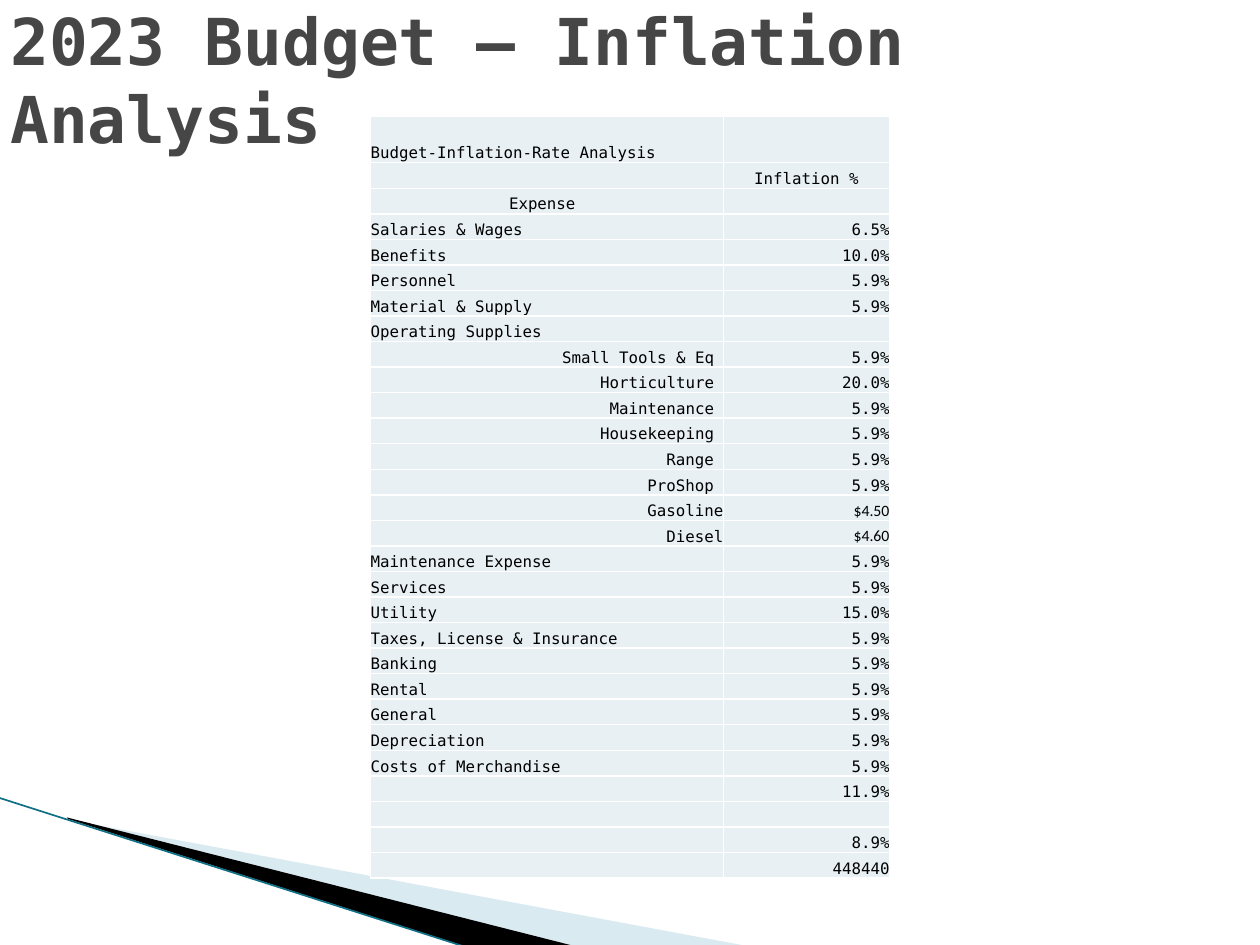
"""Build the 2023 budget slide with its inflation rate table."""
from lxml import etree
from pptx import Presentation, util as u
from pptx.dml.color import RGBColor
from pptx.enum import shapes, text
from pptx.oxml.ns import qn

TITLE = "2023 Budget – Inflation Analysis"
LEFT, CENTER, RIGHT = text.PP_ALIGN.LEFT, text.PP_ALIGN.CENTER, text.PP_ALIGN.RIGHT
HEADINGS = [
    ("Budget-Inflation-Rate Analysis", LEFT, ""),
    ("", LEFT, "Inflation %"),
    ("Expense ", CENTER, ""),
]
EXPENSES = [
    ("Salaries & Wages", LEFT, "6.5%"),
    ("Benefits", LEFT, "10.0%"),
    ("Personnel", LEFT, "5.9%"),
    ("Material & Supply", LEFT, "5.9%"),
    ("Operating Supplies", LEFT, ""),
    ("Small Tools & Eq ", RIGHT, "5.9%"),
    ("Horticulture ", RIGHT, "20.0%"),
    ("Maintenance ", RIGHT, "5.9%"),
    ("Housekeeping ", RIGHT, "5.9%"),
    ("Range ", RIGHT, "5.9%"),
    ("ProShop ", RIGHT, "5.9%"),
    ("Gasoline", RIGHT, "$4.50"),
    ("Diesel", RIGHT, "$4.60"),
    ("Maintenance Expense", LEFT, "5.9%"),
    ("Services", LEFT, "5.9%"),
    ("Utility", LEFT, "15.0%"),
    ("Taxes, License & Insurance", LEFT, "5.9%"),
    ("Banking", LEFT, "5.9%"),
    ("Rental", LEFT, "5.9%"),
    ("General", LEFT, "5.9%"),
    ("Depreciation", LEFT, "5.9%"),
    ("Costs of Merchandise", LEFT, "5.9%"),
    ("", LEFT, "11.9%"),
    ("", LEFT, ""),
    ("", LEFT, "8.9%"),
    ("", LEFT, "448440"),
]
THEME = {
    "font": "DejaVu Sans Mono", "price_font": "Calibri",
    "title_size": 36.9, "cell_size": 9, "border_width": 1, "edge_width": 0.95,
    "title": "464646", "ink": "000000", "cell": "E8F0F4", "border": "FFFFFF",
    "pale": "A0CBDC", "edge": "0F6F85",
}
WEDGES = [
    ("pale", 40, [(1.4, 16.53), (15.11, 19.08), (11.58, 19.08), (1.4, 16.51)]),
    ("ink", 100, [(1.35, 16.48), (11.61, 19.08), (9.45, 19.1), (1.37, 16.51)]),
]
EDGE = (-0.03, 16.08, 9.42, 19.1)
TITLE_BOX = {"left": -0.05, "top": 0, "width": 22.86, "height": 3.18}
TABLE_LEFT, TABLE_TOP, TABLE_HEIGHT, TOP_ROW = 7.47, 2.34, 15.37, 0.94
COLUMNS = [7.11, 3.35]


def color(name):
    return RGBColor.from_string(THEME[name])


def assign(target, values):
    for name, value in values.items():
        setattr(target, name, value)


def style_run(run, font, size, ink, bold=False):
    assign(run.font, {"name": font, "size": u.Pt(size), "bold": bold})
    run.font.color.rgb = color(ink)


def add_wedge(slide, fill, opacity, points):
    corners = [(u.Cm(x), u.Cm(y)) for x, y in points]
    builder = slide.shapes.build_freeform(*corners[0])
    builder.add_line_segments(corners[1:], close=True)
    shape = builder.convert_to_shape()
    shape.shadow.inherit = False
    shape.fill.solid()
    shape.fill.fore_color.rgb = color(fill)
    shape.line.fill.background()
    if opacity < 100:
        tint = shape.fill._xPr.find(f".//{qn('a:srgbClr')}")
        etree.SubElement(tint, qn("a:alpha"), val=str(opacity * 1000))


def add_edge(slide):
    line = slide.shapes.add_connector(shapes.MSO_CONNECTOR.STRAIGHT, *map(u.Cm, EDGE))
    line.line.color.rgb = color("edge")
    line.line.width = u.Pt(THEME["edge_width"])
    etree.SubElement(line._element.spPr, qn("a:effectLst"))


def add_title(slide):
    title = slide.shapes.title
    assign(title, {name: u.Cm(value) for name, value in TITLE_BOX.items()})
    frame = title.text_frame
    frame.text = TITLE
    assign(frame, {"word_wrap": True, "auto_size": text.MSO_AUTO_SIZE.NONE,
                   "vertical_anchor": text.MSO_ANCHOR.MIDDLE})
    paragraph = frame.paragraphs[0]
    paragraph.alignment = LEFT
    style_run(paragraph.runs[0], THEME["font"], THEME["title_size"], "title", True)


def add_borders(cell):
    properties = cell._tc.get_or_add_tcPr()
    for position, side in enumerate(("lnL", "lnR", "lnT", "lnB")):
        border = etree.Element(qn(f"a:{side}"), w=str(u.Pt(THEME["border_width"])))
        fill = etree.SubElement(border, qn("a:solidFill"))
        etree.SubElement(fill, qn("a:srgbClr"), val=THEME["border"])
        properties.insert(position, border)


def fill_cell(cell, content, alignment):
    margins = dict.fromkeys(("margin_left", "margin_right", "margin_top", "margin_bottom"), 0)
    assign(cell, {**margins, "vertical_anchor": text.MSO_ANCHOR.BOTTOM})
    cell.fill.solid()
    cell.fill.fore_color.rgb = color("cell")
    add_borders(cell)
    paragraph = cell.text_frame.paragraphs[0]
    paragraph.alignment = alignment
    if content:
        run = paragraph.add_run()
        run.text = content
        font = THEME["price_font" if content.startswith("$") else "font"]
        style_run(run, font, THEME["cell_size"], "ink")
    else:
        etree.SubElement(paragraph._p, qn("a:endParaRPr"), sz=str(THEME["cell_size"] * 100))


def add_rates(slide):
    rows = HEADINGS + EXPENSES
    row_height = (TABLE_HEIGHT - TOP_ROW) / (len(rows) - 1)
    box = (TABLE_LEFT, TABLE_TOP, sum(COLUMNS), TABLE_HEIGHT)
    table = slide.shapes.add_table(len(rows), len(COLUMNS), *map(u.Cm, box)).table
    assign(table, {"first_row": False, "horz_banding": False})
    for column, width in zip(table.columns, COLUMNS):
        column.width = u.Cm(width)
    for index, (label, alignment, rate) in enumerate(rows):
        table.rows[index].height = u.Cm(row_height if index else TOP_ROW)
        fill_cell(table.cell(index, 0), label, alignment)
        fill_cell(table.cell(index, 1), rate, CENTER if index < len(HEADINGS) else RIGHT)


def main():
    presentation = Presentation()
    assign(presentation, {"slide_width": u.Cm(25.4), "slide_height": u.Cm(19.05)})
    slide = presentation.slides.add_slide(presentation.slide_layouts[5])
    for wedge in WEDGES:
        add_wedge(slide, *wedge)
    add_edge(slide)
    add_title(slide)
    add_rates(slide)
    presentation.save("out.pptx")


if __name__ == "__main__":
    main()
